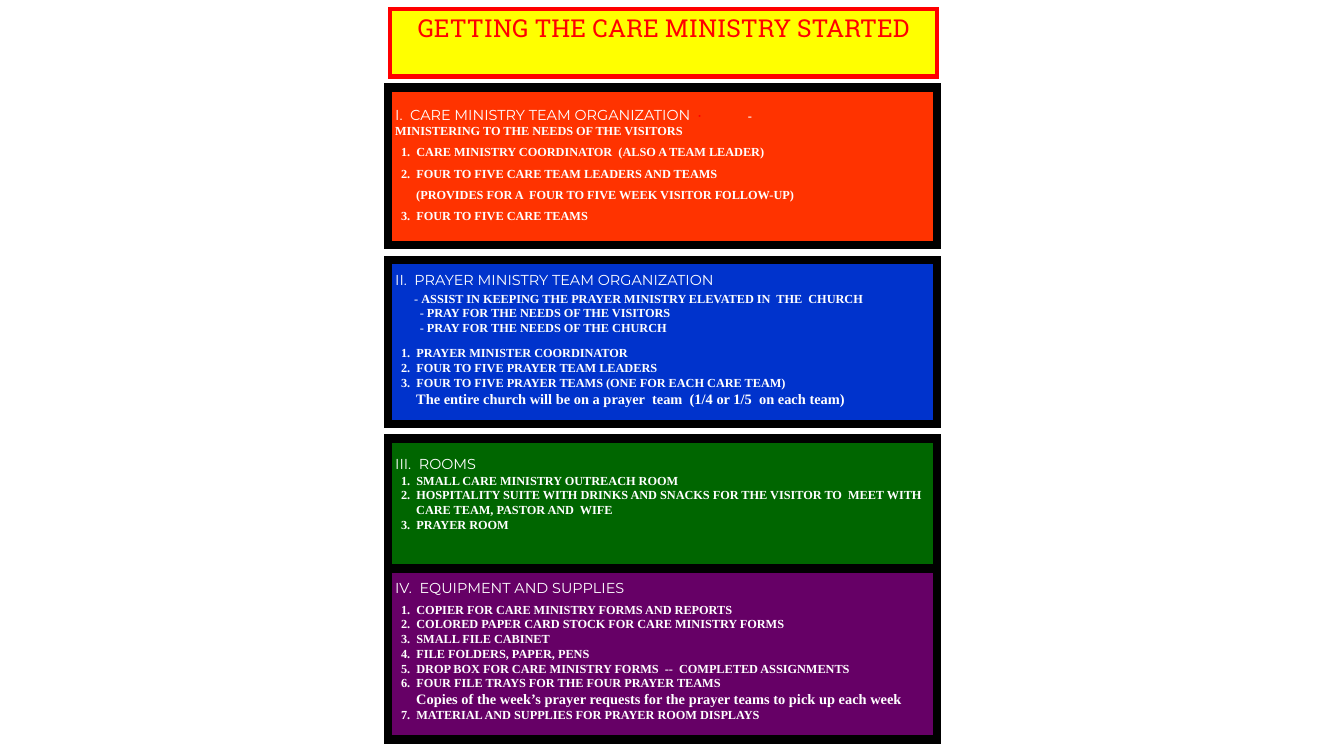
"""Build a slide on getting a care ministry started."""
from lxml import etree
from pptx import Presentation
from pptx import util as u
from pptx.dml.color import RGBColor
from pptx.enum import shapes, text
from pptx.oxml.ns import qn

HUES = {
    "yellow": "FFFF00", "red": "FF0000", "orange": "FF3300", "blue": "0033CC",
    "green": "006600", "purple": "660066", "black": "000000", "white": "FFFFFF",
}
SERIF, SANS, SLAB = "Times New Roman", "Montserrat", "Roboto Slab"
LEFT, WIDTH = 9.78, 13.84

# kind: left indent and first-line indent in cm
INDENTS = {
    "head": (0, 0), "plain": (0, 0), "item": (0.53, -0.38), "note": (0.53, 0),
    "big": (0.53, 0), "dash": (0.48, 0), "sub": (0.62, 0),
}

# fill, top, height, top inset in cm, then lines of kind, wording, space before in pt
PANELS = [
    ("orange", 2.21, 3.96, 0.47, [
        ("head", "I.  CARE MINISTRY TEAM ORGANIZATION", 0),
        ("plain", "MINISTERING TO THE NEEDS OF THE VISITORS", 0),
        ("item", "1.  CARE MINISTRY COORDINATOR  (ALSO A TEAM LEADER)", 4.5),
        ("item", "2.  FOUR TO FIVE CARE TEAM LEADERS AND TEAMS", 4.5),
        ("note", "(PROVIDES FOR A  FOUR TO FIVE WEEK VISITOR FOLLOW-UP)", 4.5),
        ("item", "3.  FOUR TO FIVE CARE TEAMS", 4.5),
    ]),
    ("blue", 6.55, 4.14, 0.29, [
        ("head", "II.  PRAYER MINISTRY TEAM ORGANIZATION", 0),
        ("dash", "ASSIST IN KEEPING THE PRAYER MINISTRY ELEVATED IN  THE  CHURCH", 1.5),
        ("sub", "PRAY FOR THE NEEDS OF THE VISITORS", 0),
        ("sub", "PRAY FOR THE NEEDS OF THE CHURCH", 0),
        ("item", "1.  PRAYER MINISTER COORDINATOR", 7.3),
        ("item", "2.  FOUR TO FIVE PRAYER TEAM LEADERS", 0),
        ("item", "3.  FOUR TO FIVE PRAYER TEAMS (ONE FOR EACH CARE TEAM)", 0),
        ("big", "The entire church will be on a prayer  team  (1/4 or 1/5  on each team)", 0),
    ]),
    ("purple", 14.3, 4.34, 0.3, [
        ("head", "IV.  EQUIPMENT AND SUPPLIES", 0),
        ("item", "1.  COPIER FOR CARE MINISTRY FORMS AND REPORTS", 3.6),
        ("item", "2.  COLORED PAPER CARD STOCK FOR CARE MINISTRY FORMS", 0),
        ("item", "3.  SMALL FILE CABINET", 0),
        ("item", "4.  FILE FOLDERS, PAPER, PENS", 0),
        ("item", "5.  DROP BOX FOR CARE MINISTRY FORMS  --  COMPLETED ASSIGNMENTS", 0),
        ("item", "6.  FOUR FILE TRAYS FOR THE FOUR PRAYER TEAMS", 0),
        ("big", "Copies of the week’s prayer requests for the prayer teams "
                "to pick up each week", 0),
        ("item", "7.  MATERIAL AND SUPPLIES FOR PRAYER ROOM DISPLAYS", 0),
    ]),
    ("green", 11.05, 3.28, 0.43, [
        ("head", "III.  ROOMS", 0),
        ("item", "1.  SMALL CARE MINISTRY OUTREACH ROOM", 0),
        ("item", "2.  HOSPITALITY SUITE WITH DRINKS AND SNACKS FOR THE VISITOR TO  "
                 "MEET WITH CARE TEAM, PASTOR AND  WIFE", 0),
        ("item", "3.  PRAYER ROOM", 0),
    ]),
]


def add_run(para, words, size, font=SERIF, hue="white", bold=False):
    run = para.add_run()
    run.text = words
    run.font.size, run.font.name, run.font.bold = u.Pt(size), font, bold
    run.font.color.rgb = RGBColor.from_string(HUES[hue])


def dress(box, fill, edge, weight, inset):
    box.fill.solid()
    box.fill.fore_color.rgb = RGBColor.from_string(HUES[fill])
    box.line.color.rgb = RGBColor.from_string(HUES[edge])
    box.line.width = u.Pt(weight)
    line = box.element.spPr.find(qn("a:ln"))
    etree.SubElement(line, qn("a:miter"), lim="800000")
    frame = box.text_frame
    frame.word_wrap = True
    frame.auto_size = text.MSO_AUTO_SIZE.NONE
    frame.vertical_anchor = text.MSO_ANCHOR.TOP
    frame.margin_left = frame.margin_right = u.Cm(0.18)
    frame.margin_top, frame.margin_bottom = u.Cm(inset), u.Cm(0.1)
    return frame


def set_tabs(para, stops):
    tabs = etree.SubElement(para._p.get_or_add_pPr(), qn("a:tabLst"))
    for stop in stops:
        etree.SubElement(tabs, qn("a:tab"), pos=str(u.Cm(stop)), algn="l")


def add_line(para, kind, words, space):
    left, first = INDENTS[kind]
    para.alignment = text.PP_ALIGN.LEFT
    para.space_before = u.Pt(space)
    props = para._p.get_or_add_pPr()
    props.set("marL", str(u.Cm(left)))
    props.set("indent", str(u.Cm(first)))
    if kind == "head":
        add_run(para, words, 10.3, SANS)
        return
    if kind in ("dash", "sub"):
        add_run(para, "- ", 8.8)
    add_run(para, words, 10.3 if kind == "big" else 8.8, bold=True)


def add_marks(para):
    set_tabs(para, (12.55, 13))
    add_run(para, "\t·", 8.8, hue="red", bold=True)
    add_run(para, "\t-", 8.8, bold=True)


def add_panel(slide, fill, top, height, inset, lines):
    box = slide.shapes.add_shape(
        shapes.MSO_SHAPE.RECTANGLE, u.Cm(LEFT), u.Cm(top), u.Cm(WIDTH), u.Cm(height))
    box.shadow.inherit = False
    frame = dress(box, fill, "black", 6, inset)
    for num, line in enumerate(lines):
        para = frame.add_paragraph() if num else frame.paragraphs[0]
        add_line(para, *line)
    return frame


def set_title(slide, words):
    box = slide.shapes.title
    box.left, box.top, box.width, box.height = (
        u.Cm(9.83), u.Cm(0.23), u.Cm(13.79), u.Cm(1.7))
    para = dress(box, "yellow", "red", 3, 0.1).paragraphs[0]
    para.alignment = text.PP_ALIGN.CENTER
    add_run(para, words, 17.6, SLAB, "red")


def main():
    deck = Presentation()
    deck.slide_width, deck.slide_height = u.Cm(33.87), u.Cm(19.05)
    slide = deck.slides.add_slide(deck.slide_layouts[5])
    set_title(slide, "GETTING THE CARE MINISTRY STARTED")
    frames = [add_panel(slide, *panel) for panel in PANELS]
    add_marks(frames[0].paragraphs[0])
    deck.save("out.pptx")


if __name__ == "__main__":
    main()
